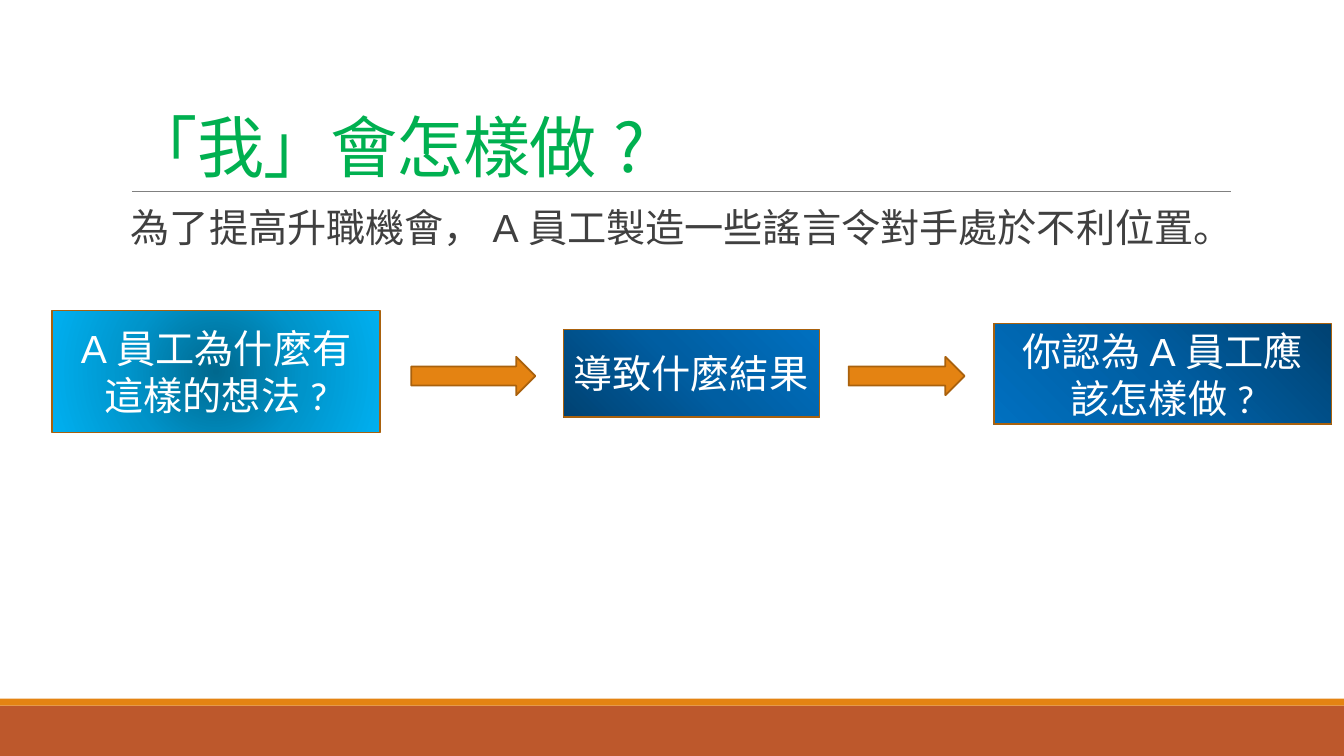
"""Build a slide that asks how "I" would act, with a three-step question flow."""
from lxml import etree
from pptx import Presentation
from pptx.dml.color import RGBColor
from pptx.enum.shapes import MSO_CONNECTOR, MSO_SHAPE
from pptx.enum.text import MSO_ANCHOR, PP_ALIGN
from pptx.oxml import parse_xml
from pptx.oxml.ns import qn
from pptx.util import Pt

RECT, ARROW = MSO_SHAPE.RECTANGLE, MSO_SHAPE.RIGHT_ARROW
STRAIGHT = MSO_CONNECTOR.STRAIGHT
TOP, MIDDLE, BOTTOM = MSO_ANCHOR.TOP, MSO_ANCHOR.MIDDLE, MSO_ANCHOR.BOTTOM
CENTER = PP_ALIGN.CENTER
A_NS = "http://schemas.openxmlformats.org/drawingml/2006/main"
COLORS = {"rust": "BD582C", "orange": "E48312", "outline": "A9610D", "rule": "808080",
          "green": "00B050", "body": "404040", "white": "FFFFFF"}
SKY = ["00688E", "0094CA", "00B0F0"]
NAVY = ["004272", "005EA2", "0070C0"]
CENTRE_GLOW = '<a:path path="circle"><a:fillToRect l="50000" t="50000" r="50000" b="50000"/></a:path>'
CORNER_GLOW = '<a:path path="circle"><a:fillToRect t="100000" r="100000"/></a:path>'
DIAGONAL = '<a:lin ang="8100000" scaled="0"/>'


def add_block(kind, x, y, w, h, fill, line=None):
    sp = s.shapes.add_shape(kind, Pt(x), Pt(y), Pt(w), Pt(h))
    sp.shadow.inherit = False
    sp.fill.solid()
    sp.fill.fore_color.rgb = RGBColor.from_string(COLORS[fill])
    if line:
        sp.line.color.rgb = RGBColor.from_string(COLORS[line])
        sp.line.width = Pt(1.25)
    else:
        sp.line.fill.background()
    return sp


def write_runs(tf, runs, size, color, anchor, east_asian):
    tf.word_wrap = True
    tf.vertical_anchor = anchor
    p = tf.paragraphs[0]
    for text, font in runs:
        r = p.add_run()
        r.text = text
        r.font.size = Pt(size)
        r.font.color.rgb = RGBColor.from_string(COLORS[color])
        r.font.name = font
        etree.SubElement(r.font._element, qn("a:ea"), typeface=east_asian)
    return p


prs = Presentation()
prs.slide_width, prs.slide_height = Pt(960), Pt(540)
s = prs.slides.add_slide(prs.slide_layouts[6])

add_block(RECT, 0, 504, 960, 36, "rust")
add_block(RECT, 0, 499, 960, 5, "orange")

rule = s.shapes.add_connector(STRAIGHT, Pt(94.3), Pt(136.8), Pt(879.1), Pt(136.8))
rule.line.color.rgb = RGBColor.from_string(COLORS["rule"])
rule.line.width = Pt(0.5)
etree.SubElement(rule._element.spPr, qn("a:effectLst"))

title = s.shapes.add_textbox(Pt(86.4), Pt(22.6), Pt(792), Pt(114.2))
p = write_runs(title.text_frame, [("「我」會怎樣做?", "Noto Sans CJK SC")], 48, "green", BOTTOM, "Arial")
p.line_spacing = 0.85
p.runs[0].font._element.set("spc", "-50")

body = s.shapes.add_textbox(Pt(86.4), Pt(145.4), Pt(792), Pt(316.8))
tf = body.text_frame
tf.margin_left, tf.margin_right = Pt(7.2), 0
p = write_runs(tf, [("為了提高升職機會，A員工製造一些謠言令對手處於不利位置。", "Arial")],
               28, "body", TOP, "Arial")
p.line_spacing = 0.9
p.space_before, p.space_after = Pt(12), Pt(2)

questions = [
    (37.4, 221.8, 234, 87.1, SKY, CENTRE_GLOW,
     [("A員工", "Arial"), ("為什麼有這樣的想法?", "Calibri")]),
    (402.5, 235.4, 182.9, 62.6, NAVY, CORNER_GLOW, [("導致什麼結果?", "Calibri")]),
    (709.9, 231.1, 241.2, 72, NAVY, DIAGONAL,
     [("你認為", "Noto Sans CJK TC"), ("A員工", "Arial"),
      ("應該", "Noto Sans CJK TC"), ("怎樣做?", "Calibri")]),
]
for x, y, w, h, shades, direction, runs in questions:
    sp = add_block(RECT, x, y, w, h, "orange", "outline")
    stops = "".join(f'<a:gs pos="{i * 50000}"><a:srgbClr val="{shade}"/></a:gs>'
                    for i, shade in enumerate(shades))
    gradient = parse_xml(f'<a:gradFill xmlns:a="{A_NS}" rotWithShape="1">'
                         f'<a:gsLst>{stops}</a:gsLst>{direction}</a:gradFill>')
    solid = sp._element.spPr.find(qn("a:solidFill"))
    sp._element.spPr.replace(solid, gradient)
    p = write_runs(sp.text_frame, runs, 28, "white", MIDDLE, "Calibri")
    p.alignment = CENTER

for x, w in [(293.8, 88.6), (606.2, 82.8)]:
    add_block(ARROW, x, 254.9, w, 27.4, "orange", "outline")

prs.save("out.pptx")
